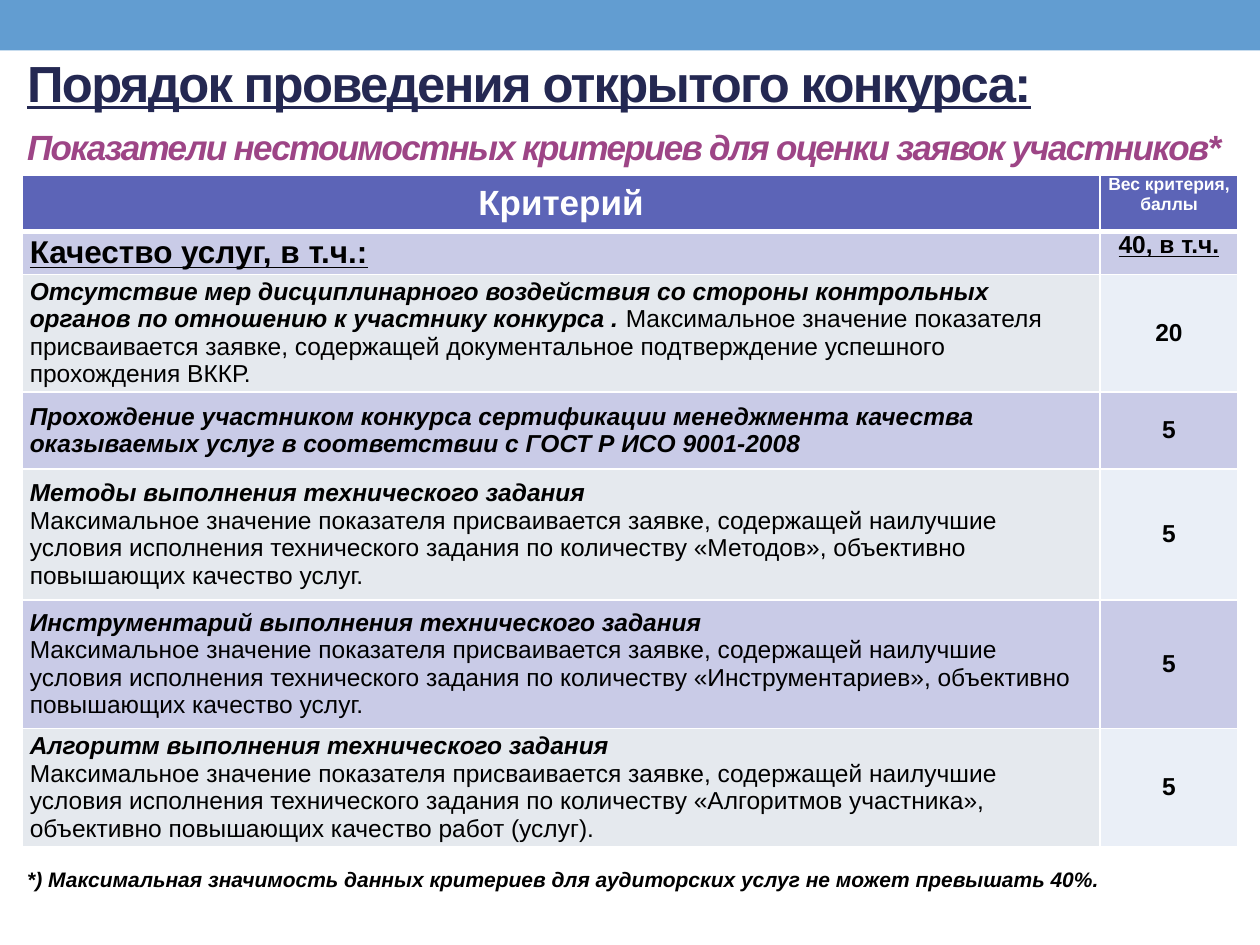
"""Build a slide with the non-price criteria table of an open tender."""
from lxml import etree
from pptx import Presentation
from pptx.dml.color import RGBColor
from pptx.enum.shapes import MSO_SHAPE
from pptx.enum.text import MSO_ANCHOR, MSO_AUTO_SIZE, PP_ALIGN
from pptx.oxml.ns import qn
from pptx.util import Cm, Pt

RECTANGLE = MSO_SHAPE.RECTANGLE
TOP, MIDDLE = MSO_ANCHOR.TOP, MSO_ANCHOR.MIDDLE
LEFT, CENTER = PP_ALIGN.LEFT, PP_ALIGN.CENTER
GROW = MSO_AUTO_SIZE.SHAPE_TO_FIT_TEXT

COLORS = {
    "bar": "629DD1", "title": "242852", "subtitle": "9D4586",
    "header": "5C64B7", "lilac": "C9CBE7", "gray": "E5E9EE",
    "pale": "EAEFF7", "white": "FFFFFF", "black": "000000",
}


def add_span(para, text, size, color, styles="", spacing=0):
    span = para.add_run()
    span.text = text
    font = span.font
    font.name = "Arial"
    font.size = Pt(size)
    font.color.rgb = RGBColor.from_string(COLORS[color])
    font.bold = "b" in styles
    font.italic = "i" in styles
    font.underline = "u" in styles
    if spacing:
        span._r.get_or_add_rPr().set("spc", str(spacing))


def add_borders(cell, bottom_width):
    properties = cell._tc.get_or_add_tcPr()
    widths = {"a:lnL": 1, "a:lnR": 1, "a:lnT": 1, "a:lnB": bottom_width}
    for index, (tag, width) in enumerate(widths.items()):
        line = etree.Element(qn(tag), w=str(Pt(width)))
        fill = etree.SubElement(line, qn("a:solidFill"))
        etree.SubElement(fill, qn("a:srgbClr"), val=COLORS["white"])
        properties.insert(index, line)


deck = Presentation()
deck.slide_width, deck.slide_height = Cm(25.4), Cm(19.05)
page = deck.slides.add_slide(deck.slide_layouts[6])

bar = page.shapes.add_shape(RECTANGLE, 0, 0, deck.slide_width, Cm(1.02))
bar.shadow.inherit = False
bar.fill.solid()
bar.fill.fore_color.rgb = RGBColor.from_string(COLORS["bar"])
bar.line.fill.background()

captions = [
    (0.91, 24.41, 1.5, "Порядок проведения открытого конкурса:", 29, "title", "bu", -100),
    (2.41, 24.79, 1.12, "Показатели нестоимостных критериев для оценки заявок участников*",
     20, "subtitle", "bi", -100),
    (17.35, 24.61, 0.76, "*) Максимальная значимость данных критериев для аудиторских услуг "
     "не может превышать 40%.", 12, "black", "bi", 0),
]
for top, width, height, text, size, color, styles, spacing in captions:
    box = page.shapes.add_textbox(Cm(0.3), Cm(top), Cm(width), Cm(height))
    box.text_frame.word_wrap = True
    box.text_frame.auto_size = GROW
    add_span(box.text_frame.paragraphs[0], text, size, color, styles, spacing)

maximum = "Максимальное значение показателя присваивается заявке, содержащей"
best = f"{maximum} наилучшие условия исполнения технического задания по количеству"
rows = [
    (1.14, [[("Критерий", 20, "b")]], ("Вес критерия, баллы", 10, "b")),
    (0.86, [[("Качество услуг, в т.ч.:", 18, "bu")]], ("40, в т.ч.", 14, "bu")),
    (2.34, [[("Отсутствие мер дисциплинарного воздействия со стороны контрольных органов "
              "по отношению к участнику конкурса . ", 14, "bi"),
             (f"{maximum} документальное подтверждение успешного прохождения ВККР.", 14, "")]],
     ("20", 14, "b")),
    (1.55, [[("Прохождение участником конкурса сертификации менеджмента качества оказываемых "
              "услуг в соответствии с ГОСТ Р ИСО 9001-2008", 14, "bi")]], ("5", 14, "b")),
]
tasks = [
    (2.64, "Методы", "«Методов», объективно повышающих качество услуг."),
    (2.59, "Инструментарий", "«Инструментариев», объективно повышающих качество услуг."),
    (2.38, "Алгоритм", "«Алгоритмов участника», объективно повышающих качество работ (услуг)."),
]
for height, name, ending in tasks:
    heading = [(f"{name} выполнения технического задания", 14, "bi")]
    rows.append((height, [heading, [(f"{best} {ending}", 14, "")]], ("5", 14, "b")))

total = sum(row[0] for row in rows)
frame = page.shapes.add_table(len(rows), 2, Cm(0.45), Cm(3.53), Cm(24.51), Cm(total))
table = frame.table
table.columns[0].width, table.columns[1].width = Cm(21.72), Cm(2.79)

for row_index, (height, criterion, weight) in enumerate(rows):
    table.rows[row_index].height = Cm(height)
    is_header = row_index == 0
    if is_header:
        fills = ("header", "header")
    else:
        fills = ("lilac", "lilac") if row_index % 2 else ("gray", "pale")
    for column, paragraphs in enumerate((criterion, [[weight]])):
        cell = table.cell(row_index, column)
        cell.margin_left = cell.margin_right = Cm(0.15)
        cell.margin_top = cell.margin_bottom = 0
        cell.vertical_anchor = TOP if column and row_index < 2 else MIDDLE
        cell.fill.solid()
        cell.fill.fore_color.rgb = RGBColor.from_string(COLORS[fills[column]])
        add_borders(cell, 3 if is_header else 1)
        for index, spans in enumerate(paragraphs):
            para = cell.text_frame.add_paragraph() if index else cell.text_frame.paragraphs[0]
            para.alignment = CENTER if column or is_header else LEFT
            for text, size, styles in spans:
                add_span(para, text, size, "white" if is_header else "black", styles)

deck.save("out.pptx")
